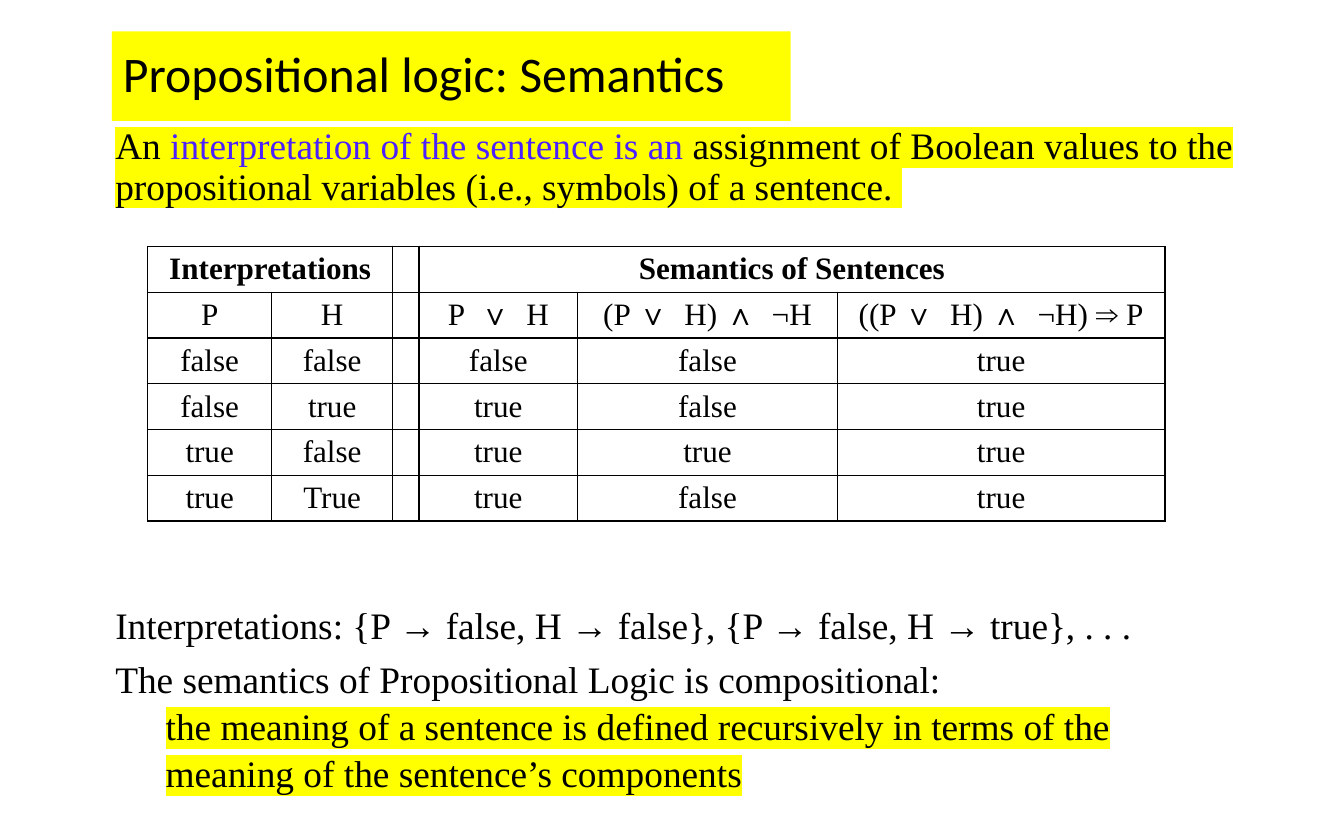
import pptx
import pptx.util
import pptx.dml.color
import pptx.enum.shapes
import pptx.enum.text
import pptx.oxml.ns
import lxml.etree

Pt = pptx.util.Pt
RGB = pptx.dml.color.RGBColor.from_string
qn = pptx.oxml.ns.qn
MID = pptx.enum.text.MSO_ANCHOR.MIDDLE
MUTE = {"ink": "000000", "mark": "FFFF00", "term": "4B21FD", "paper": "FFFFFF"}
SERIF = "Times New Roman"


def write(para, text, size=24, font=SERIF, color="ink", bold=False, mark=False):
    run = para.add_run()
    run.text = text
    run.font.size = Pt(size)
    run.font.bold = bold
    run.font.color.rgb = RGB(MUTE[color])
    run.font.name = font
    if mark:
        light = lxml.etree.Element(qn("a:highlight"))
        lxml.etree.SubElement(light, qn("a:srgbClr"), val=MUTE["mark"])
        run.font._element.find(qn("a:solidFill")).addnext(light)


show = pptx.Presentation()
show.slide_width, show.slide_height = Pt(864), Pt(540)
slide = show.slides.add_slide(show.slide_layouts[6])
shapes = slide.shapes

# Title bar
bar = shapes.add_shape(pptx.enum.shapes.MSO_SHAPE.RECTANGLE,
                       Pt(72), Pt(20.2), Pt(436.3), Pt(57.6))
bar.shadow.inherit = False
bar.fill.solid()
bar.fill.fore_color.rgb = RGB(MUTE["mark"])
bar.line.fill.background()
bar.text_frame.vertical_anchor = MID
para = bar.text_frame.paragraphs[0]
para.alignment = pptx.enum.text.PP_ALIGN.LEFT
para.line_spacing = 0.9
write(para, "Propositional logic: Semantics", size=32, font="Calibri")

# Text above and below the table: each paragraph is (indent, space before, runs)
intro = [(0, 0, [
    ("An ", "ink", True),
    ("interpretation of the sentence is an ", "term", True),
    ("assignment of Boolean values to the propositional variables "
     "(i.e., symbols) of a sentence. ", "ink", True)])]
notes = [
    (0, 0, [("Interpretations: {P → false, H → false}, {P → false, H → true}, . . .",
             "ink", False)]),
    (0, 9, [("The semantics of Propositional Logic is compositional:", "ink", False)]),
    (32.4, 4.5, [("the meaning of a sentence is defined recursively in terms of the",
                  "ink", True)]),
    (32.4, 4.5, [("meaning of the sentence’s components", "ink", True)]),
]
for top, high, paras in [(78.5, 60, intro), (386.5, 134, notes)]:
    box = shapes.add_textbox(Pt(67), Pt(top), Pt(745.2), Pt(high))
    frame = box.text_frame
    frame.word_wrap = True
    for i, (indent, space, runs) in enumerate(paras):
        para = frame.paragraphs[0] if i == 0 else frame.add_paragraph()
        para.line_spacing = 0.9
        para.space_before = Pt(space)
        if indent:
            props = para._p.get_or_add_pPr()
            props.set("marL", str(Pt(indent)))
            props.set("indent", "0")
        for text, color, mark in runs:
            write(para, text, color=color, mark=mark)

# Truth table
rows = [
    ["Interpretations", "", "", "Semantics of Sentences", "", ""],
    ["P", "H", "", "P  ∨  H", "(P ∨  H) ∧  ¬H", "((P ∨  H) ∧  ¬H) ⇒ P"],
    ["false", "false", "", "false", "false", "true"],
    ["false", "true", "", "true", "false", "true"],
    ["true", "false", "", "true", "true", "true"],
    ["true", "True", "", "true", "false", "true"],
]
wide = [79.7, 77.8, 16.9, 102, 167, 210.6]
tall = 29.45
table = shapes.add_table(len(rows), len(wide), Pt(95), Pt(158.4),
                         Pt(sum(wide)), Pt(tall * len(rows))).table
table.first_row = table.horz_banding = False
for col, width in zip(table.columns, wide):
    col.width = Pt(width)
for r, row in enumerate(rows):
    table.rows[r].height = Pt(tall)
    for c, text in enumerate(row):
        cell = table.cell(r, c)
        cell.margin_top = cell.margin_bottom = 0
        cell.margin_left = cell.margin_right = Pt(3)
        cell.vertical_anchor = MID
        cell.fill.solid()
        cell.fill.fore_color.rgb = RGB(MUTE["paper"])
        para = cell.text_frame.paragraphs[0]
        para.alignment = pptx.enum.text.PP_ALIGN.CENTER
        if text:
            write(para, text, size=20, bold=r == 0)
        # Cell borders
        props = cell._tc.get_or_add_tcPr()
        for i, side in enumerate(["a:lnL", "a:lnR", "a:lnT", "a:lnB"]):
            edge = lxml.etree.Element(qn(side), w=str(Pt(1)))
            fill = lxml.etree.SubElement(edge, qn("a:solidFill"))
            lxml.etree.SubElement(fill, qn("a:srgbClr"), val=MUTE["ink"])
            props.insert(i, edge)
table.cell(0, 0).merge(table.cell(0, 1))
table.cell(0, 3).merge(table.cell(0, 5))

show.save("out.pptx")
